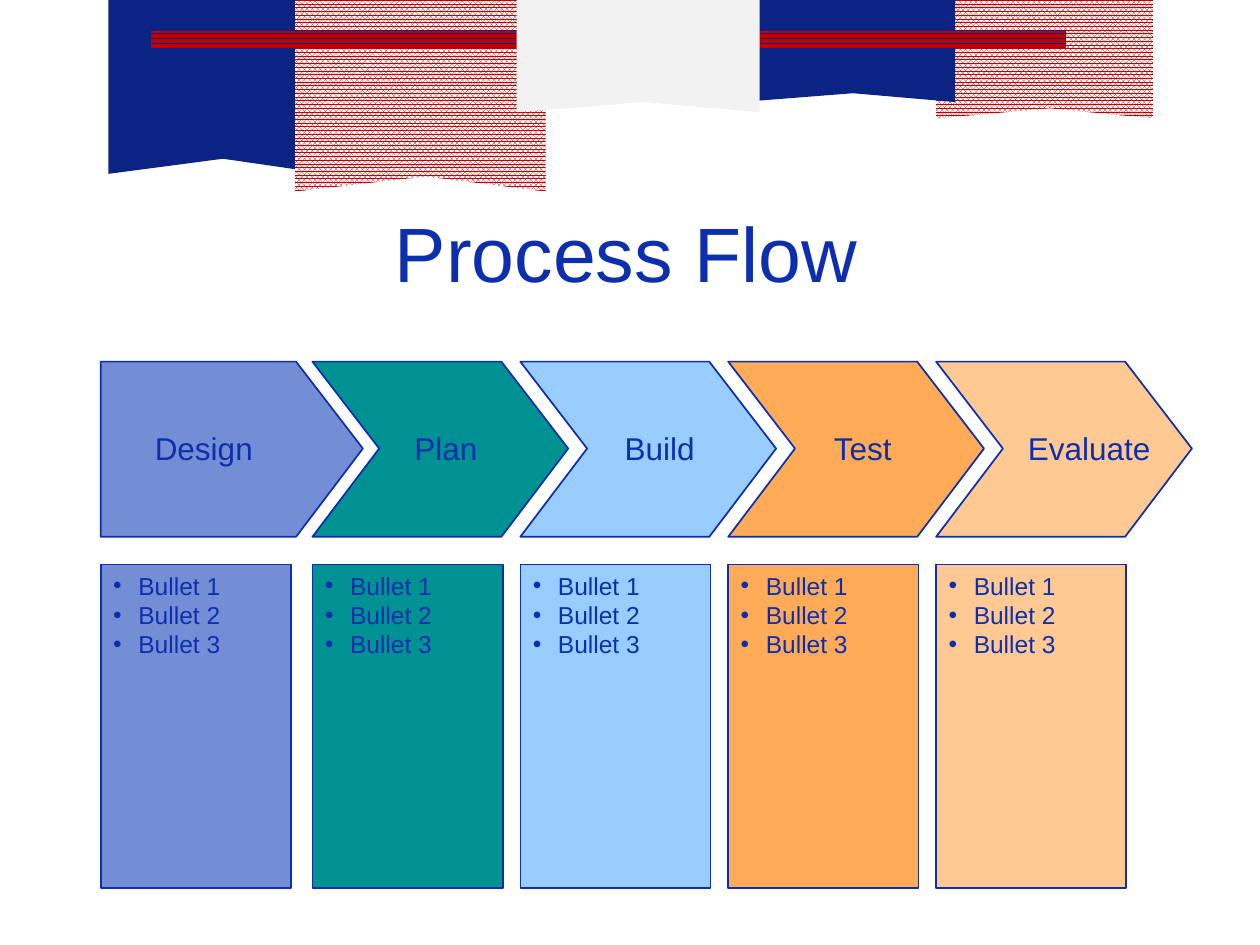
from dataclasses import dataclass

from lxml.etree import SubElement
from pptx import Presentation
from pptx.dml.color import RGBColor
from pptx.enum.dml import MSO_PATTERN as Pattern
from pptx.enum.shapes import MSO_SHAPE as Preset
from pptx.enum.text import MSO_ANCHOR as Anchor, MSO_AUTO_SIZE as AutoSize, PP_ALIGN as Align
from pptx.oxml.ns import qn
from pptx.util import Emu, Pt

PX = 9144
FONT = "Arial"

BLUE = RGBColor(0x0E, 0x2F, 0xAD)
NAVY = RGBColor(0x0B, 0x23, 0x82)
RED = RGBColor(0xC0, 0x00, 0x00)
WHITE = RGBColor(0xFF, 0xFF, 0xFF)
PALE_GREY = RGBColor(0xF2, 0xF2, 0xF2)
PERIWINKLE = RGBColor(0x74, 0x8E, 0xD6)
TEAL = RGBColor(0x00, 0x91, 0x93)
SKY = RGBColor(0x99, 0xCC, 0xFF)
ORANGE = RGBColor(0xFF, 0xAB, 0x57)
PEACH = RGBColor(0xFF, 0xC9, 0x93)

ARROW_TOP, ARROW_HEIGHT, ARROW_POINT, ARROW_BODY = 287, 139, 53, 150
BOX_TOP, BOX_WIDTH, BOX_HEIGHT = 448, 151, 257
LABEL_TOP, LABEL_HEIGHT = 336, 40
BULLETS = ("Bullet 1", "Bullet 2", "Bullet 3")


@dataclass(frozen=True)
class Banner:
    """A hanging flag with a notched lower edge."""
    left: int
    right: int
    bottom: int
    notch_x: int
    notch_y: int
    color: RGBColor
    patterned: bool = False


@dataclass(frozen=True)
class Stage:
    """A process step with its arrow, label and bullet box."""
    name: str
    left: int
    label_left: int
    label_width: int
    color: RGBColor
    is_first: bool = False


BACK_BANNERS = (
    Banner(86, 260, 138, 177, 126, NAVY),
    Banner(234, 433, 152, 338, 140, RED, True),
    Banner(743, 915, 94, 833, 86, RED, True),
    Banner(588, 758, 81, 677, 74, NAVY),
)
FRONT_BANNER = Banner(410, 603, 89, 511, 81, PALE_GREY)

STAGES = (
    Stage("Design", 80, 113, 98, PERIWINKLE, True),
    Stage("Plan", 248, 319, 70, TEAL),
    Stage("Build", 413, 486, 76, SKY),
    Stage("Test", 578, 652, 69, ORANGE),
    Stage("Evaluate", 743, 806, 117, PEACH),
)


def px(*lengths: int) -> list[Emu]:
    """Turn px lengths into EMU."""
    return [Emu(length * PX) for length in lengths]


def add_run(paragraph, text: str, size: int) -> None:
    """Append a blue run to a paragraph."""
    run = paragraph.add_run()
    run.text = text
    run.font.name = FONT
    run.font.size = Pt(size)
    run.font.color.rgb = BLUE


def fill_solid(shape, color: RGBColor) -> None:
    """Give a shape a flat fill without a shadow."""
    shape.shadow.inherit = False
    shape.fill.solid()
    shape.fill.fore_color.rgb = color


def fill_pattern(shape, pattern: Pattern, front: RGBColor, back: RGBColor) -> None:
    """Give a shape a two-colour pattern without a shadow."""
    shape.shadow.inherit = False
    shape.fill.patterned()
    shape.fill.pattern = pattern
    shape.fill.fore_color.rgb = front
    shape.fill.back_color.rgb = back


def outline(shape) -> None:
    """Draw the thin blue border."""
    shape.line.color.rgb = BLUE
    shape.line.width = Pt(1)


def add_polygon(slide, points: list[tuple[int, int]]):
    """Add a closed outline through px points."""
    builder = slide.shapes.build_freeform(*points[0], scale=PX)
    builder.add_line_segments(points[1:], close=True)
    return builder.convert_to_shape()


def add_banner(slide, banner: Banner) -> None:
    """Hang one flag from the top edge."""
    shape = add_polygon(slide, [
        (banner.left, 0), (banner.right, 0), (banner.right, banner.bottom),
        (banner.notch_x, banner.notch_y), (banner.left, banner.bottom),
    ])
    if banner.patterned:
        fill_pattern(shape, Pattern.PERCENT_80, banner.color, WHITE)
    else:
        fill_solid(shape, banner.color)
    shape.line.fill.background()


def add_ribbon(slide) -> None:
    """Add the striped ribbon across the flags."""
    ribbon = slide.shapes.add_shape(Preset.RECTANGLE, *px(120, 24, 726, 14))
    fill_pattern(ribbon, Pattern.DARK_HORIZONTAL, RED, NAVY)
    ribbon.line.fill.background()


def add_title(slide, text: str) -> None:
    """Place the slide title."""
    title = slide.shapes.title
    title.left, title.top, title.width, title.height = px(47, 137, 900, 125)
    title.text_frame.vertical_anchor = Anchor.MIDDLE
    paragraph = title.text_frame.paragraphs[0]
    paragraph.alignment = Align.CENTER
    add_run(paragraph, text, 44)


def add_bullet_box(slide, stage: Stage) -> None:
    """Add the box of bullets below an arrow."""
    box = slide.shapes.add_shape(
        Preset.RECTANGLE, *px(stage.left, BOX_TOP, BOX_WIDTH, BOX_HEIGHT))
    fill_solid(box, stage.color)
    outline(box)
    frame = box.text_frame
    frame.vertical_anchor = Anchor.TOP
    for index, text in enumerate(BULLETS):
        paragraph = frame.add_paragraph() if index else frame.paragraphs[0]
        paragraph.alignment = Align.LEFT
        properties = paragraph._p.get_or_add_pPr()
        properties.set("marL", str(20 * PX))
        properties.set("indent", str(-20 * PX))
        SubElement(properties, qn("a:buFont"), typeface=FONT)
        SubElement(properties, qn("a:buChar"), char="•")
        add_run(paragraph, text, 14)


def add_arrow(slide, stage: Stage) -> None:
    """Add the arrow of a stage, flat-backed for the first one."""
    left, bottom = stage.left, ARROW_TOP + ARROW_HEIGHT
    middle = ARROW_TOP + ARROW_HEIGHT // 2
    shoulder = left + ARROW_BODY + (5 if stage.is_first else 0)
    points = [(left, ARROW_TOP), (shoulder, ARROW_TOP),
              (shoulder + ARROW_POINT, middle), (shoulder, bottom), (left, bottom)]
    if not stage.is_first:
        points.append((left + ARROW_POINT, middle))
    arrow = add_polygon(slide, points)
    fill_solid(arrow, stage.color)
    outline(arrow)


def add_label(slide, stage: Stage) -> None:
    """Write the stage name over its arrow."""
    label = slide.shapes.add_textbox(
        *px(stage.label_left, LABEL_TOP, stage.label_width, LABEL_HEIGHT))
    label.text_frame.word_wrap = False
    label.text_frame.auto_size = AutoSize.SHAPE_TO_FIT_TEXT
    add_run(label.text_frame.paragraphs[0], stage.name, 18)


def main() -> None:
    """Build and save the process flow slide."""
    presentation = Presentation()
    presentation.slide_width, presentation.slide_height = px(1000, 750)
    slide = presentation.slides.add_slide(presentation.slide_layouts[5])
    for banner in BACK_BANNERS:
        add_banner(slide, banner)
    add_ribbon(slide)
    add_banner(slide, FRONT_BANNER)
    add_title(slide, "Process Flow")
    for add_part in (add_bullet_box, add_arrow, add_label):
        for stage in STAGES:
            add_part(slide, stage)
    presentation.save("out.pptx")


if __name__ == "__main__":
    main()
